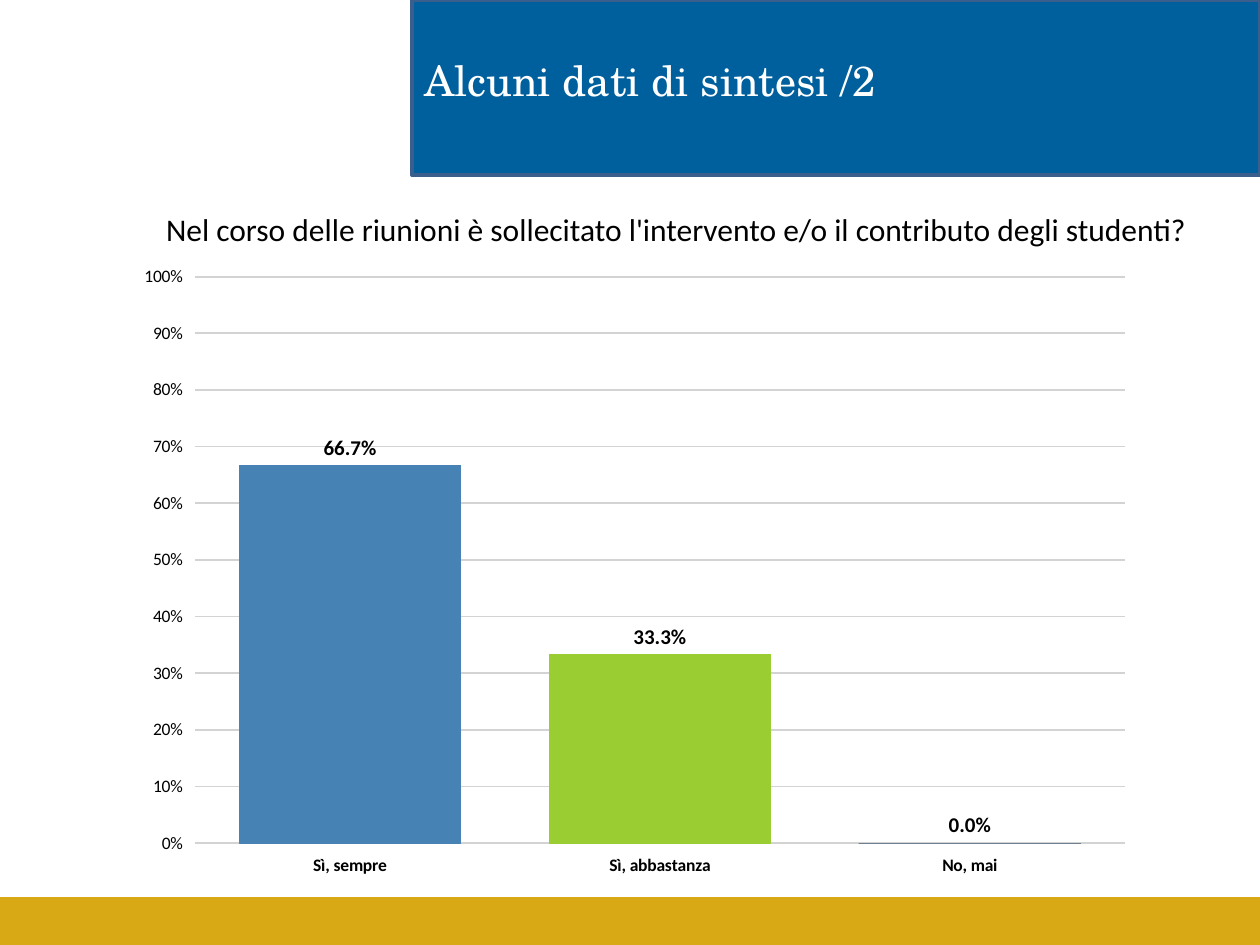
from lxml import etree
from pptx import Presentation
from pptx.chart.data import CategoryChartData
from pptx.dml.color import RGBColor
from pptx.enum.chart import XL_CHART_TYPE, XL_LABEL_POSITION, XL_TICK_MARK
from pptx.enum.shapes import MSO_SHAPE
from pptx.enum.text import MSO_ANCHOR
from pptx.oxml.ns import qn
from pptx.util import Inches, Pt

COLUMN_CHART = XL_CHART_TYPE.COLUMN_CLUSTERED
LABEL_ABOVE = XL_LABEL_POSITION.OUTSIDE_END
TICK_OUT = XL_TICK_MARK.OUTSIDE
RECTANGLE = MSO_SHAPE.RECTANGLE
TOP = MSO_ANCHOR.TOP

COLORS = {
    "white": "FFFFFF",
    "black": "000000",
    "footer": "D8A915",
    "banner": "00609D",
    "banner_edge": "3A5F8C",
    "grid": "D3D3D3",
}
ANSWERS = {
    "Sì, sempre": (0.667, "4682B4"),
    "Sì, abbastanza": (0.333, "9ACD32"),
    "No, mai": (0, "708090"),
}
PLOT_AREA = {"x": 0.07, "y": 0.035, "w": 0.91, "h": 0.894}


def rgb(name):
    return RGBColor.from_string(COLORS.get(name, name))


class SlideBuilder:
    """Places elements on a grid of 100 columns by 75 rows."""

    body_font = "Calibri"
    title_font = "TeX Gyre Schola"

    def __init__(self, deck):
        self.page = deck.slides.add_slide(deck.slide_layouts[6])
        self.column = deck.slide_width / 100
        self.row = deck.slide_height / 75

    def place(self, left, top, width, height):
        return (round(left * self.column), round(top * self.row),
                round(width * self.column), round(height * self.row))

    def style(self, font, size, color="black", bold=False, name=body_font):
        font.size = Pt(size)
        font.name = name
        font.bold = bold
        font.color.rgb = rgb(color)

    def bar(self, area, fill, edge=None):
        shape = self.page.shapes.add_shape(RECTANGLE, *self.place(*area))
        shape.shadow.inherit = False
        shape.fill.solid()
        shape.fill.fore_color.rgb = rgb(fill)
        if edge:
            shape.line.color.rgb = rgb(edge)
            shape.line.width = Pt(2)
        else:
            shape.line.fill.background()

    def text(self, area, words, size, color, font_name):
        box = self.page.shapes.add_textbox(*self.place(*area))
        frame = box.text_frame
        frame.word_wrap = True
        frame.vertical_anchor = TOP
        frame.text = words
        self.style(frame.paragraphs[0].runs[0].font, size, color, name=font_name)

    def column_chart(self, area, answers):
        data = CategoryChartData()
        data.categories = list(answers)
        data.add_series("Series 1", [value for value, _ in answers.values()])
        chart = self.page.shapes.add_chart(COLUMN_CHART, *self.place(*area), data).chart
        chart.has_legend = False
        chart.has_title = False
        self.style(chart.font, 18)
        self.axes(chart)
        self.fix_plot_area(chart)

        plot = chart.plots[0]
        plot.gap_width = 40
        plot.vary_by_categories = False
        series = plot.series[0]
        for index, (_, color) in enumerate(answers.values()):
            point = series.points[index].format
            point.fill.solid()
            point.fill.fore_color.rgb = rgb(color)
            point.line.color.rgb = rgb(color)
            point.line.width = Pt(0.75)

        labels = series.data_labels
        labels.show_value = True
        labels.number_format = "0.0%"
        labels.number_format_is_linked = False
        labels.position = LABEL_ABOVE
        self.style(labels.font, 12, bold=True)

    def axes(self, chart):
        for axis, bold in ((chart.category_axis, True), (chart.value_axis, False)):
            axis.major_tick_mark = TICK_OUT
            axis.format.line.fill.background()
            self.style(axis.tick_labels.font, 10, bold=bold)
        scale = chart.value_axis
        scale.minimum_scale = 0
        scale.maximum_scale = 1
        scale.major_unit = 0.1
        scale.tick_labels.number_format = "0%"
        scale.tick_labels.number_format_is_linked = False
        scale.major_gridlines.format.line.color.rgb = rgb("grid")
        scale.major_gridlines.format.line.width = Pt(1)

    def fix_plot_area(self, chart):
        """Pin the inner plot area to set shares of the chart frame."""
        plot_area = chart.element.chart.plotArea
        for old in plot_area.findall(qn("c:layout")):
            plot_area.remove(old)
        layout = etree.Element(qn("c:layout"))
        plot_area.insert(0, layout)
        manual = etree.SubElement(layout, qn("c:manualLayout"))
        settings = {"layoutTarget": "inner", "xMode": "edge", "yMode": "edge", **PLOT_AREA}
        for tag, value in settings.items():
            etree.SubElement(manual, qn(f"c:{tag}")).set("val", str(value))


def main():
    deck = Presentation()
    deck.slide_width = Inches(10)
    deck.slide_height = Inches(7.5)
    builder = SlideBuilder(deck)
    builder.bar((0, 71.2, 100, 3.8), "footer")
    builder.bar((32.7, 0, 67.3, 13.9), "banner", "banner_edge")
    builder.text((32.7, 3.8, 67.3, 4.4), "Alcuni dati di sintesi /2",
                 24, "white", builder.title_font)
    builder.column_chart((9.8, 20.2, 81.1, 50.3), ANSWERS)
    builder.text((12.2, 16.2, 87.4, 5.2),
                 "Nel corso delle riunioni è sollecitato l'intervento e/o il contributo degli studenti?",
                 18, "black", builder.body_font)
    deck.save("out.pptx")


if __name__ == "__main__":
    main()
